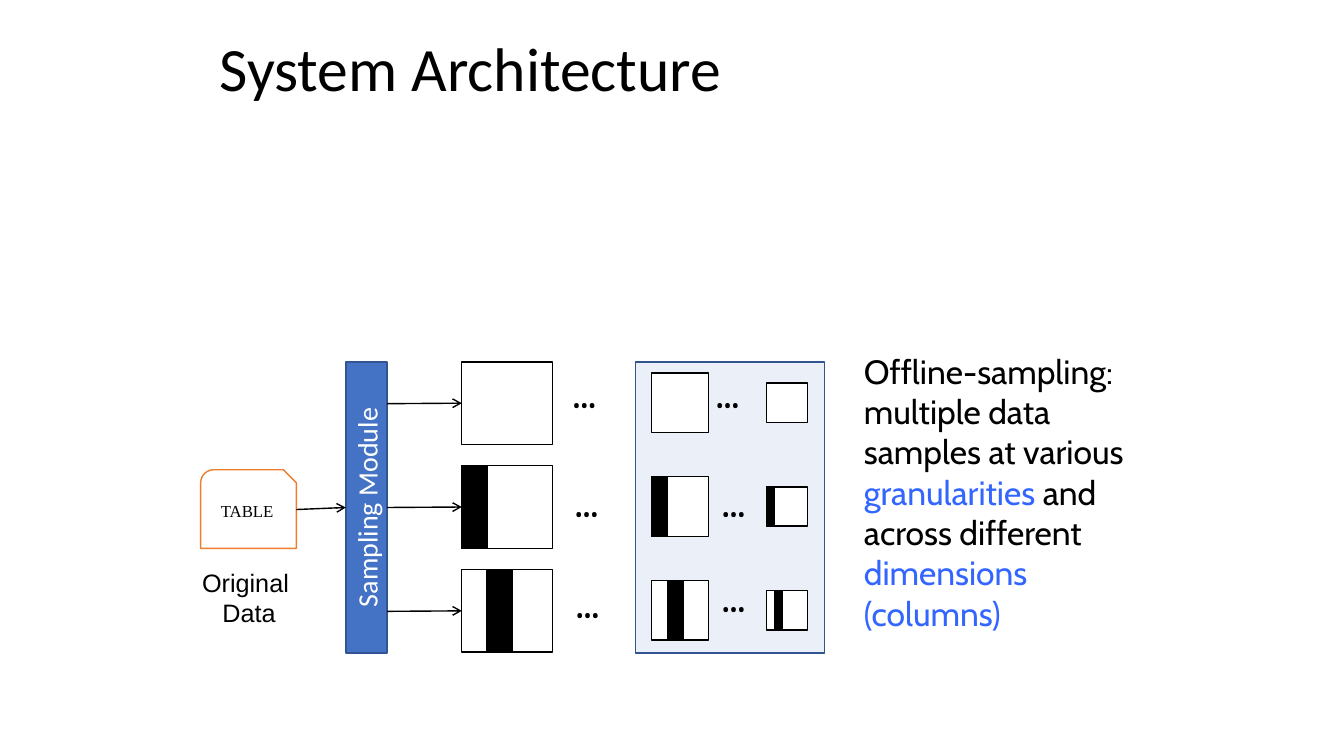
from dataclasses import dataclass

from lxml.etree import SubElement
from pptx import Presentation
from pptx.dml.color import RGBColor
from pptx.enum.shapes import MSO_CONNECTOR, MSO_SHAPE
from pptx.enum.text import MSO_ANCHOR, MSO_AUTO_SIZE, PP_ALIGN
from pptx.oxml.ns import qn
from pptx.util import Inches, Pt

COLORS = {
    "black": "000000", "white": "FFFFFF", "blue": "4472C4",
    "navy": "325491", "orange": "ED7D31", "accent": "3366FF",
}
ROW_PITCH = 1.03
ROW_COUNT = 3


@dataclass
class Box:
    left: float
    top: float
    width: float
    height: float

    def inner(self, left, top, width, height):
        return Box(self.left + left, self.top + top, width, height)

    def lengths(self):
        return [Inches(value) for value in (self.left, self.top, self.width, self.height)]


def color(name):
    return RGBColor.from_string(COLORS[name])


def format_span(span, font, size, ink="black", bold=False):
    span.font.name = font
    span.font.size = Pt(size)
    span.font.bold = bold
    span.font.color.rgb = color(ink)


def write(shape, text, font, size, ink="black", bold=False, align=PP_ALIGN.LEFT):
    shape.text_frame.text = text
    for para in shape.text_frame.paragraphs:
        para.alignment = align
        for span in para.runs:
            format_span(span, font, size, ink, bold)


def add_block(page, box, fill="white", line="black", kind=MSO_SHAPE.RECTANGLE):
    block = page.shapes.add_shape(kind, *box.lengths())
    block.shadow.inherit = False
    block.fill.solid()
    block.fill.fore_color.rgb = color(fill)
    block.line.color.rgb = color(line)
    block.line.width = Pt(1)
    block.text_frame.vertical_anchor = MSO_ANCHOR.MIDDLE
    return block


def add_label(page, box, text, font, size, bold=False, align=PP_ALIGN.LEFT):
    label = page.shapes.add_textbox(*box.lengths())
    label.text_frame.word_wrap = False
    label.text_frame.auto_size = MSO_AUTO_SIZE.SHAPE_TO_FIT_TEXT
    write(label, text, font, size, bold=bold, align=align)
    return label


def add_arrow(page, start, end):
    points = [Inches(value) for value in (*start, *end)]
    arrow = page.shapes.add_connector(MSO_CONNECTOR.STRAIGHT, *points)
    arrow.line.color.rgb = color("black")
    arrow.line.width = Pt(1)
    SubElement(arrow.line._get_or_add_ln(), qn("a:tailEnd"), type="arrow")
    SubElement(arrow._element.spPr, qn("a:effectLst"))
    return arrow


def add_title(page, box):
    title = page.shapes.add_textbox(*box.lengths())
    title.text_frame.word_wrap = True
    title.text_frame.vertical_anchor = MSO_ANCHOR.MIDDLE
    write(title, "System Architecture", "Calibri", 44)
    title.text_frame.paragraphs[0].line_spacing = 0.9


def add_source_table(page, box):
    table = add_block(page, box.inner(0.09, 0, 0.95, 0.78), line="orange",
                      kind=MSO_SHAPE.SNIP_ROUND_RECTANGLE)
    write(table, "TABLE", "Times New Roman", 12, align=PP_ALIGN.CENTER)
    add_label(page, box.inner(0, 0.92, box.width, 0.71), "Original \nData",
              "Arial", 18, align=PP_ALIGN.CENTER)


def add_module(page, box):
    frame = Box(box.left + (box.width - box.height) / 2,
                box.top + (box.height - box.width) / 2, box.height, box.width)
    module = add_block(page, frame, "blue", "navy")
    module.rotation = 270
    write(module, "Sampling Module", "Calibri", 20, "white", align=PP_ALIGN.CENTER)
    return module


def add_panel(page, box):
    panel = add_block(page, box, "blue", "navy")
    tint = panel._element.spPr.find(qn("a:solidFill"))[0]
    SubElement(tint, qn("a:alpha"), val="10000")


def add_samples(page, box, stripe):
    samples = []
    for row in range(ROW_COUNT):
        cell = box.inner(0, row * ROW_PITCH, box.width, box.height)
        samples.append(add_block(page, cell))
        if row:
            add_block(page, cell.inner((row - 1) * stripe, 0, stripe, box.height), "black")
    return samples


def add_ellipses(page, box, offsets):
    for left, top in offsets:
        add_label(page, box.inner(left, top, 0.54, 0.5), "…", "Cambria", 24, bold=True)


def add_flow(page, box, module, samples):
    middle = box.top + box.height / 2
    right = box.left + box.width
    inlet = add_arrow(page, (box.left - 0.49, middle + 0.02), (box.left, middle))
    inlet.end_connect(module, 0)
    inlet.end_x, inlet.end_y = Inches(box.left), Inches(middle)
    for row, sample in enumerate(samples):
        height = middle + (row - 1) * ROW_PITCH
        arrow = add_arrow(page, (right, height), (right + 0.75, height))
        arrow.end_connect(sample, 1)
        if row == 1:
            arrow.begin_connect(module, 2)
            arrow.begin_x, arrow.begin_y = Inches(right), Inches(middle)


def add_description(page, box):
    description = page.shapes.add_textbox(*box.lengths())
    description.text_frame.word_wrap = True
    para = description.text_frame.paragraphs[0]
    para.space_before = Pt(20)
    for text, ink in (
        ("Offline-sampling: multiple data samples at various ", "black"),
        ("granularities", "accent"),
        (" and across different ", "black"),
        ("dimensions (columns)", "accent"),
    ):
        span = para.add_run()
        span.text = text
        format_span(span, "Cabin", 24, ink)


def add_architecture(page, box):
    module_box = box.inner(1.53, 0, 0.41, box.height)
    panel_box = box.inner(4.4, 0, 1.88, box.height)
    add_panel(page, panel_box)
    add_source_table(page, box.inner(0, 1.07, 1.14, 1.63))
    module = add_module(page, module_box)
    samples = add_samples(page, box.inner(2.68, 0, 0.9, 0.82), 0.25)
    add_samples(page, panel_box.inner(0.16, 0.11, 0.57, 0.59), 0.16)
    add_samples(page, panel_box.inner(1.3, 0.21, 0.41, 0.39), 0.08)
    add_ellipses(page, box, [(3.67, 0.08), (3.69, 1.16), (3.7, 2.16)])
    add_ellipses(page, panel_box, [(0.69, 0.08), (0.75, 1.16), (0.75, 2.1)])
    add_flow(page, module_box, module, samples)


def main():
    deck = Presentation()
    deck.slide_width, deck.slide_height = Inches(13.33), Inches(7.5)
    page = deck.slides.add_slide(deck.slide_layouts[6])
    add_title(page, Box(2.08, 0.08, 9, 1.25))
    add_architecture(page, Box(1.9, 3.59, 6.28, 2.89))
    add_description(page, Box(8.47, 3.43, 3.03, 2.99))
    deck.save("out.pptx")


if __name__ == "__main__":
    main()
